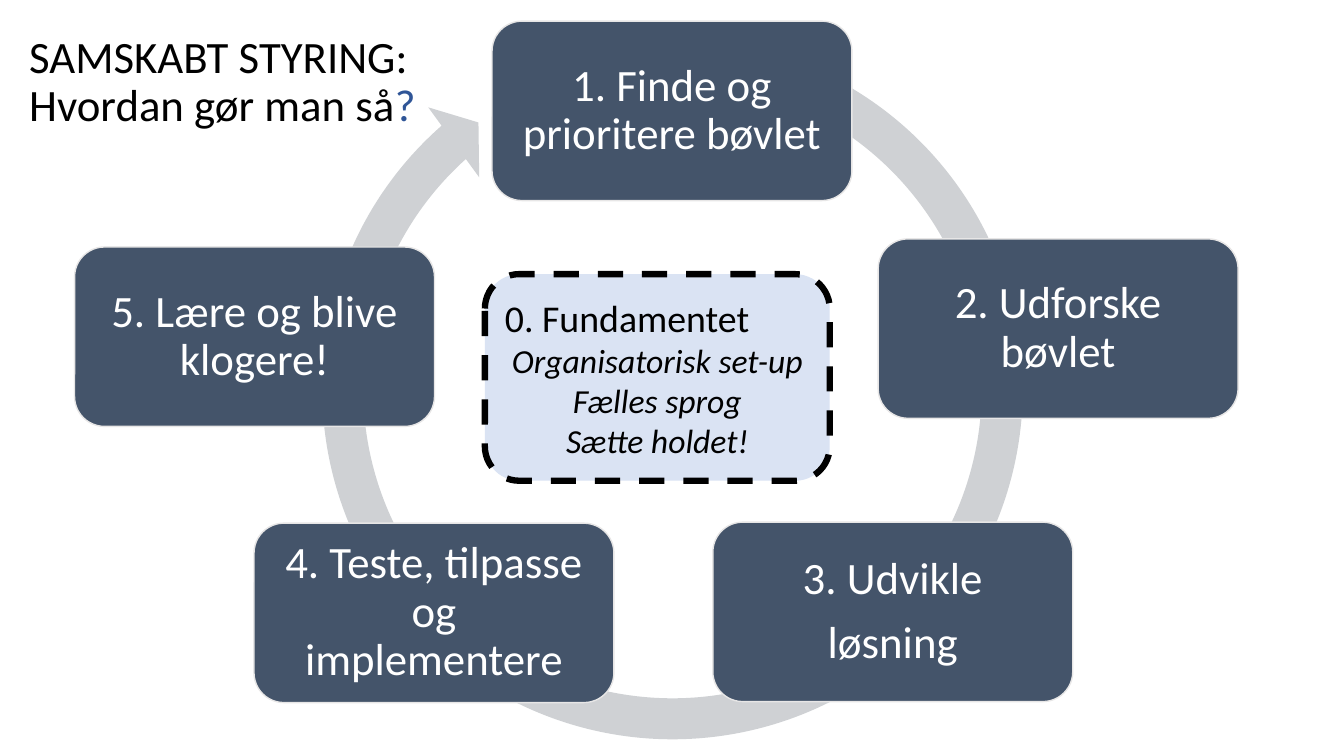
"""Build a slide showing a five-step cycle around a shared foundation."""
from dataclasses import dataclass
from typing import Any

from pptx import Presentation
from pptx.dml.color import RGBColor
from pptx.enum.dml import MSO_LINE
from pptx.enum.shapes import MSO_SHAPE
from pptx.enum.text import MSO_ANCHOR, PP_ALIGN
from pptx.util import Inches, Pt

ROUNDED = MSO_SHAPE.ROUNDED_RECTANGLE
CYCLE_ARROW = MSO_SHAPE.CIRCULAR_ARROW
DASH = MSO_LINE.DASH
MIDDLE = MSO_ANCHOR.MIDDLE
LEFT, CENTER = PP_ALIGN.LEFT, PP_ALIGN.CENTER

SLIDE_WIDTH, SLIDE_HEIGHT = Inches(13.33), Inches(7.5)
FONT = "Calibri"
WHITE, BLACK, BLUE = "FFFFFF", "000000", "2F5597"
STEP_WIDTH, STEP_HEIGHT = 26.78, 23.73
STEP_INSET = Inches(0.21)
ARROW_ADJUSTMENTS = (0.055, 3.307, 137.07, 174.281, 0.058)

STEP_FRAME = {"margin_left": STEP_INSET, "margin_right": STEP_INSET}
STEP_PARAGRAPH = {"alignment": CENTER, "line_spacing": 0.9, "space_after": Pt(11)}
TITLE_PARAGRAPH = {"alignment": LEFT, "line_spacing": 0.9}
LARGE = {"size": Pt(32)}
HEADING = {"size": Pt(27)}
DETAIL = {"size": Pt(24), "italic": True}


@dataclass(frozen=True)
class Area:
    """Position and size as percentages of the slide."""

    left: float
    top: float
    width: float
    height: float

    def lengths(self) -> tuple[int, int, int, int]:
        """Return left, top, width and height as slide lengths."""
        return (
            int(SLIDE_WIDTH * self.left / 100),
            int(SLIDE_HEIGHT * self.top / 100),
            int(SLIDE_WIDTH * self.width / 100),
            int(SLIDE_HEIGHT * self.height / 100),
        )


@dataclass(frozen=True)
class Step:
    """One step of the cycle."""

    left: float
    top: float
    lines: tuple[str, ...]


@dataclass(frozen=True)
class Outline:
    """Line around a shape."""

    color: str
    width: float
    dash: Any = None


STEPS = (
    Step(36.61, 2.8, ("1. Finde og prioritere bøvlet",)),
    Step(65.34, 31.6, ("2. Udforske bøvlet",)),
    Step(53.04, 69.07, ("3. Udvikle", "løsning")),
    Step(18.9, 69.2, ("4. Teste, tilpasse og implementere",)),
    Step(5.55, 32.67, ("5. Lære og blive klogere!",)),
)
ARROW_AREA = Area(22.28, 2.13, 55.51, 98.67)
FOUNDATION_AREA = Area(36.08, 36.27, 25.66, 27.33)
TITLE_AREA = Area(1.43, 1.07, 58.36, 19.73)
FOUNDATION_DETAILS = ("Organisatorisk set-up", "Fælles sprog", "Sætte holdet!")
STEP_OUTLINE = Outline("E7E6E6", 1)
FOUNDATION_OUTLINE = Outline(BLACK, 4.5, DASH)


def color(value: str) -> RGBColor:
    """Convert a hex string to a colour."""
    return RGBColor.from_string(value)


def apply(target: Any, values: dict[str, Any]) -> None:
    """Set each format value on the target."""
    for name, value in values.items():
        setattr(target, name, value)


def add_run(paragraph: Any, text: str, ink: str, font_format: dict[str, Any]) -> None:
    """Add a formatted run to a paragraph."""
    run = paragraph.add_run()
    run.text = text
    apply(run.font, {"name": FONT, **font_format})
    run.font.color.rgb = color(ink)


def next_paragraph(frame: Any, values: dict[str, Any]) -> Any:
    """Return the unused first paragraph or a new one, formatted."""
    first = frame.paragraphs[0]
    paragraph = frame.add_paragraph() if first.runs else first
    apply(paragraph, values)
    return paragraph


def add_filled_shape(
    slide: Any, kind: Any, area: Area, fill: str, outline: Outline | None = None
) -> Any:
    """Add a filled shape with an optional outline."""
    shape = slide.shapes.add_shape(kind, *area.lengths())
    shape.shadow.inherit = False
    shape.fill.solid()
    shape.fill.fore_color.rgb = color(fill)
    if outline is None:
        shape.line.fill.background()
    else:
        shape.line.color.rgb = color(outline.color)
        apply(shape.line, {"width": Pt(outline.width), "dash_style": outline.dash})
    apply(shape.text_frame, {"word_wrap": True, "vertical_anchor": MIDDLE})
    return shape


def add_arrow(slide: Any) -> None:
    """Add the circular arrow behind the steps."""
    arrow = add_filled_shape(slide, CYCLE_ARROW, ARROW_AREA, "CFD1D4")
    for index, value in enumerate(ARROW_ADJUSTMENTS):
        arrow.adjustments[index] = value


def add_step(slide: Any, step: Step) -> None:
    """Add one step box with its text."""
    area = Area(step.left, step.top, STEP_WIDTH, STEP_HEIGHT)
    frame = add_filled_shape(slide, ROUNDED, area, "44546A", STEP_OUTLINE).text_frame
    apply(frame, STEP_FRAME)
    for line in step.lines:
        add_run(next_paragraph(frame, STEP_PARAGRAPH), line, WHITE, LARGE)


def add_foundation(slide: Any) -> None:
    """Add the dashed box in the middle of the cycle."""
    shape = add_filled_shape(
        slide, ROUNDED, FOUNDATION_AREA, "DAE3F3", FOUNDATION_OUTLINE
    )
    frame = shape.text_frame
    add_run(next_paragraph(frame, {"alignment": LEFT}), "0. Fundamentet", BLACK, HEADING)
    for detail in FOUNDATION_DETAILS:
        add_run(next_paragraph(frame, {"alignment": CENTER}), detail, BLACK, DETAIL)


def add_title(slide: Any) -> None:
    """Add the two-line title."""
    frame = slide.shapes.add_textbox(*TITLE_AREA.lengths()).text_frame
    apply(frame, {"word_wrap": True, "vertical_anchor": MIDDLE})
    paragraph = next_paragraph(frame, TITLE_PARAGRAPH)
    add_run(paragraph, "SAMSKABT STYRING:", BLACK, LARGE)
    paragraph.add_line_break()
    add_run(paragraph, "Hvordan gør man så", BLACK, LARGE)
    add_run(paragraph, "?", BLUE, LARGE)


def main() -> None:
    """Build and save the presentation."""
    presentation = Presentation()
    apply(presentation, {"slide_width": SLIDE_WIDTH, "slide_height": SLIDE_HEIGHT})
    slide = presentation.slides.add_slide(presentation.slide_layouts[6])
    add_arrow(slide)
    for step in STEPS:
        add_step(slide, step)
    add_foundation(slide)
    add_title(slide)
    presentation.save("out.pptx")


if __name__ == "__main__":
    main()
